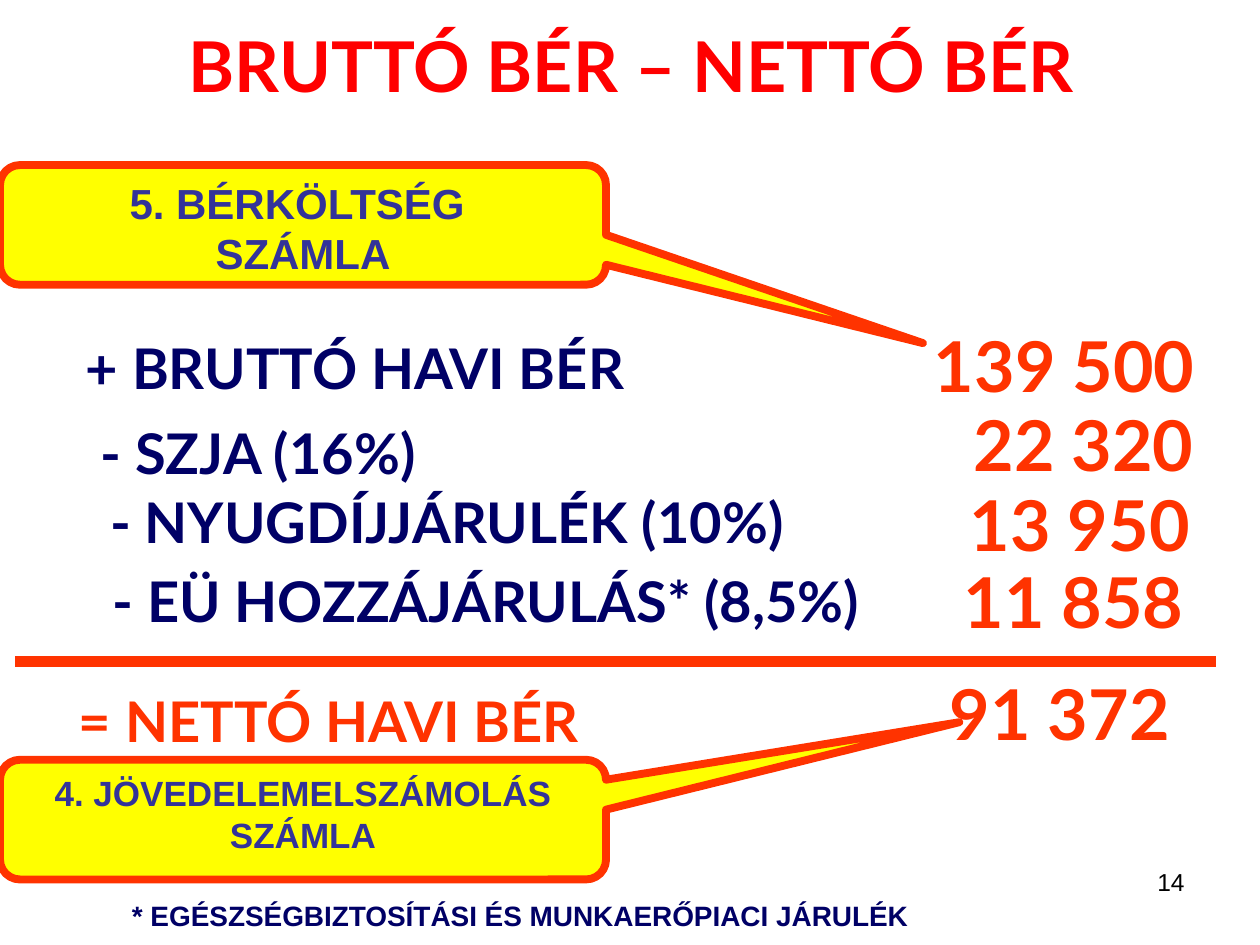
from lxml.etree import SubElement
from pptx import Presentation
from pptx.dml.color import RGBColor
from pptx.enum.shapes import MSO_CONNECTOR, MSO_SHAPE
from pptx.enum.text import MSO_ANCHOR, PP_ALIGN
from pptx.oxml.ns import qn
from pptx.util import Inches, Pt

NAVY, ORANGE, RED = "000066", "FF3300", "FF0000"
YELLOW, INDIGO, BLACK = "FFFF00", "333399", "000000"

# Content
TITLE = "BRUTTÓ BÉR – NETTÓ BÉR"
# label, its colour, (left, top, width), amount, (left, top, width)
PAY_LINES = [
    ("+ BRUTTÓ HAVI BÉR", NAVY, (0.39, 2.6, 4.86), "139 500", (7.2, 2.51, 2.49)),
    ("- SZJA (16%)", NAVY, (0.43, 3.27, 3.24), "22 320", (7.53, 3.14, 2.14)),
    ("- NYUGDÍJJÁRULÉK (10%)", NAVY, (0.43, 3.82, 6.24), "13 950", (7.5, 3.77, 2.14)),
    ("- EÜ HOZZÁJÁRULÁS* (8,5%)", NAVY, (0.43, 4.45, 6.86), "11 858", (7.45, 4.38, 2.14)),
    ("= NETTÓ HAVI BÉR", ORANGE, (0.35, 5.4, 4.52), "91 372", (7.34, 5.27, 2.14)),
]
# text, top, font size, pointer tip as a share of the callout's size
ACCOUNTS = [
    ("4. JÖVEDELEMELSZÁMOLÁS SZÁMLA", 6.03, 20, (1.083, -0.814)),
    ("5. BÉRKÖLTSÉG \nSZÁMLA", 1.31, 24, (1.023, 0.988)),
]
FOOTNOTE = "* EGÉSZSÉGBIZTOSÍTÁSI ÉS MUNKAERŐPIACI JÁRULÉK"
PAGE_NUMBER = "14"


def color(hex_value):
    return RGBColor.from_string(hex_value)


def write(shape, text, size, hex_value, font="Lato", bold=True,
          align=PP_ALIGN.CENTER, anchor=MSO_ANCHOR.TOP, wrap=True):
    frame = shape.text_frame
    frame.word_wrap = wrap
    frame.vertical_anchor = anchor
    paragraph = frame.paragraphs[0]
    paragraph.text = text
    paragraph.alignment = align
    for run in paragraph.runs:
        run.font.name = font
        run.font.size = Pt(size)
        run.font.bold = bold
        run.font.color.rgb = color(hex_value)


def add_text(slide, box, text, size, hex_value, **style):
    label = slide.shapes.add_textbox(*map(Inches, box))
    write(label, text, size, hex_value, **style)


def add_account(slide, text, top, size, tip):
    callout = slide.shapes.add_shape(
        MSO_SHAPE.ROUNDED_RECTANGULAR_CALLOUT,
        Inches(0), Inches(top), Inches(4.81), Inches(0.95))
    callout.shadow.inherit = False
    callout.adjustments[0], callout.adjustments[1] = tip
    callout.fill.solid()
    callout.fill.fore_color.rgb = color(YELLOW)
    callout.line.color.rgb = color(ORANGE)
    callout.line.width = Pt(4.5)
    write(callout, text, size, INDIGO, font="Arial")


def main():
    deck = Presentation()
    deck.slide_width, deck.slide_height = Inches(10), Inches(7.5)
    slide = deck.slides.add_slide(deck.slide_layouts[5])

    # Title
    title = slide.shapes.title
    title.left, title.top = Inches(0.51), Inches(-0.11)
    title.width, title.height = Inches(9), Inches(1.25)
    write(title, TITLE, 40, RED, anchor=MSO_ANCHOR.MIDDLE)

    # Pay calculation
    for label, label_color, label_box, amount, amount_box in PAY_LINES:
        add_text(slide, (*label_box, 0.63), label, 32, label_color, wrap=False)
        add_text(slide, (*amount_box, 0.77), amount, 40, ORANGE, wrap=False)

    # Sum line
    sum_line = slide.shapes.add_connector(
        MSO_CONNECTOR.STRAIGHT, Inches(0.12), Inches(5.25), Inches(9.65), Inches(5.25))
    sum_line.line.color.rgb = color(ORANGE)
    sum_line.line.width = Pt(6)
    SubElement(sum_line._element.spPr, qn("a:effectLst"))

    # Account callouts
    for account in ACCOUNTS:
        add_account(slide, *account)

    # Footnote and page number
    add_text(slide, (0.94, 7.08, 6.38, 0.37), FOOTNOTE, 16, NAVY, font="Arial", wrap=False)
    add_text(slide, (7.17, 6.83, 2.33, 0.52), PAGE_NUMBER, 14, BLACK,
             font="Arial", bold=False, align=PP_ALIGN.RIGHT)

    deck.save("out.pptx")


if __name__ == "__main__":
    main()
